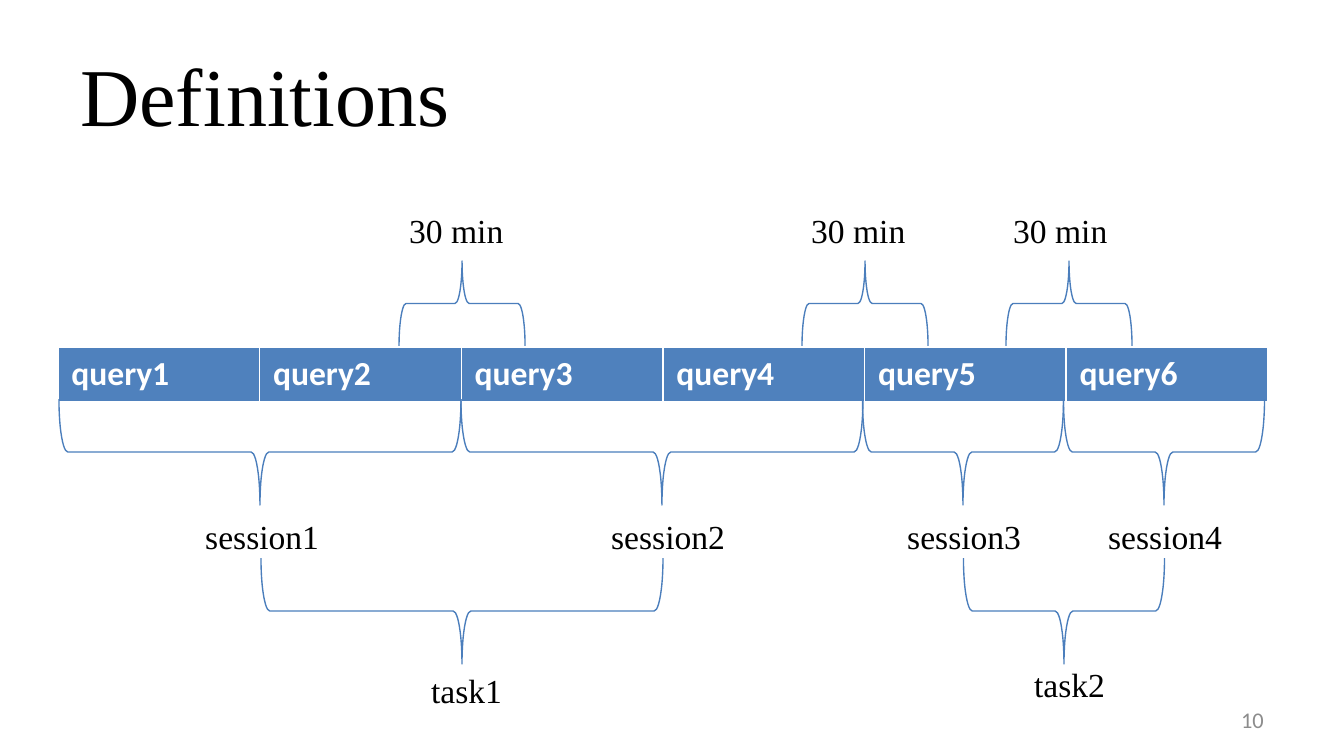
import pptx
import pptx.util
import pptx.dml.color
import pptx.enum.shapes
import pptx.enum.text

RGB = pptx.dml.color.RGBColor
ALIGN = pptx.enum.text.PP_ALIGN
ANCHOR = pptx.enum.text.MSO_ANCHOR
BLACK = RGB(0x00, 0x00, 0x00)
WHITE = RGB(0xFF, 0xFF, 0xFF)
GREY = RGB(0x8C, 0x8C, 0x8C)
BLUE = RGB(0x4F, 0x81, 0xBD)
LINE = RGB(0x4B, 0x7E, 0xBC)
SERIF, SANS = "Times New Roman", "Calibri"
PX = 914400 / 134.4

QUERIES = ["query1", "query2", "query3", "query4", "query5", "query6"]
TABLE = (58, 347, 1210, 55)

# Each group: brace top, brace height, rotation, and its marks as
# (label, label left, label top, brace centre, brace span)
GROUPS = [
    (261, 85, 90, [
        ("30 min", 396, 203, 462, 126),
        ("30 min", 798, 203, 865, 126),
        ("30 min", 1000, 203, 1069, 126),
    ]),
    (399, 106, 270, [
        ("session1", 192, 509, 260, 402),
        ("session2", 598, 509, 662, 402),
        ("session3", 894, 509, 963, 201),
        ("session4", 1095, 509, 1164, 201),
    ]),
    (558, 106, 270, [
        ("task1", 418, 663, 462, 402),
        ("task2", 1021, 657, 1064, 201),
    ]),
]


def emu(*sizes):
    return [round(size * PX) for size in sizes]


def write(par, text, size, font, color, bold=False):
    run = par.add_run()
    run.text = text
    run.font.size = pptx.util.Pt(size)
    run.font.name = font
    run.font.bold = bold
    run.font.color.rgb = color


def add_text(slide, box, text, size, font=SERIF, color=BLACK,
             align=ALIGN.LEFT, anchor=ANCHOR.TOP):
    frame = slide.shapes.add_textbox(*emu(*box)).text_frame
    frame.word_wrap = True
    frame.vertical_anchor = anchor
    par = frame.paragraphs[0]
    par.alignment = align
    write(par, text, size, font, color)


def add_brace(slide, mid, top, span, high, turn):
    """Place a brace, turned on its side, over a span centred on mid."""
    left = mid - high / 2
    upper = top + high / 2 - span / 2
    brace = slide.shapes.add_shape(
        pptx.enum.shapes.MSO_SHAPE.LEFT_BRACE, *emu(left, upper, high, span))
    brace.rotation = turn
    brace.shadow.inherit = False
    brace.fill.background()
    brace.line.color.rgb = LINE
    brace.line.width = pptx.util.Pt(0.75)


def add_queries(slide):
    table = slide.shapes.add_table(1, len(QUERIES), *emu(*TABLE)).table
    for col, name in enumerate(QUERIES):
        cell = table.cell(0, col)
        cell.fill.solid()
        cell.fill.fore_color.rgb = BLUE
        write(cell.text_frame.paragraphs[0], name, 18, SANS, WHITE, True)


def main():
    deck = pptx.Presentation()
    deck.slide_width, deck.slide_height = emu(1344, 756)
    slide = deck.slides.add_slide(deck.slide_layouts[6])
    add_text(slide, (67, 31, 1210, 126), "Definitions", 44,
             anchor=ANCHOR.MIDDLE)
    add_queries(slide)
    add_text(slide, (964, 700, 313, 40), "10", 12, SANS, GREY,
             ALIGN.RIGHT, ANCHOR.MIDDLE)
    for top, high, turn, marks in GROUPS:
        for label, left, upper, mid, span in marks:
            add_brace(slide, mid, top, span, high, turn)
            add_text(slide, (left, upper, 202, 54), label, 18)
    deck.save("out.pptx")


if __name__ == "__main__":
    main()
